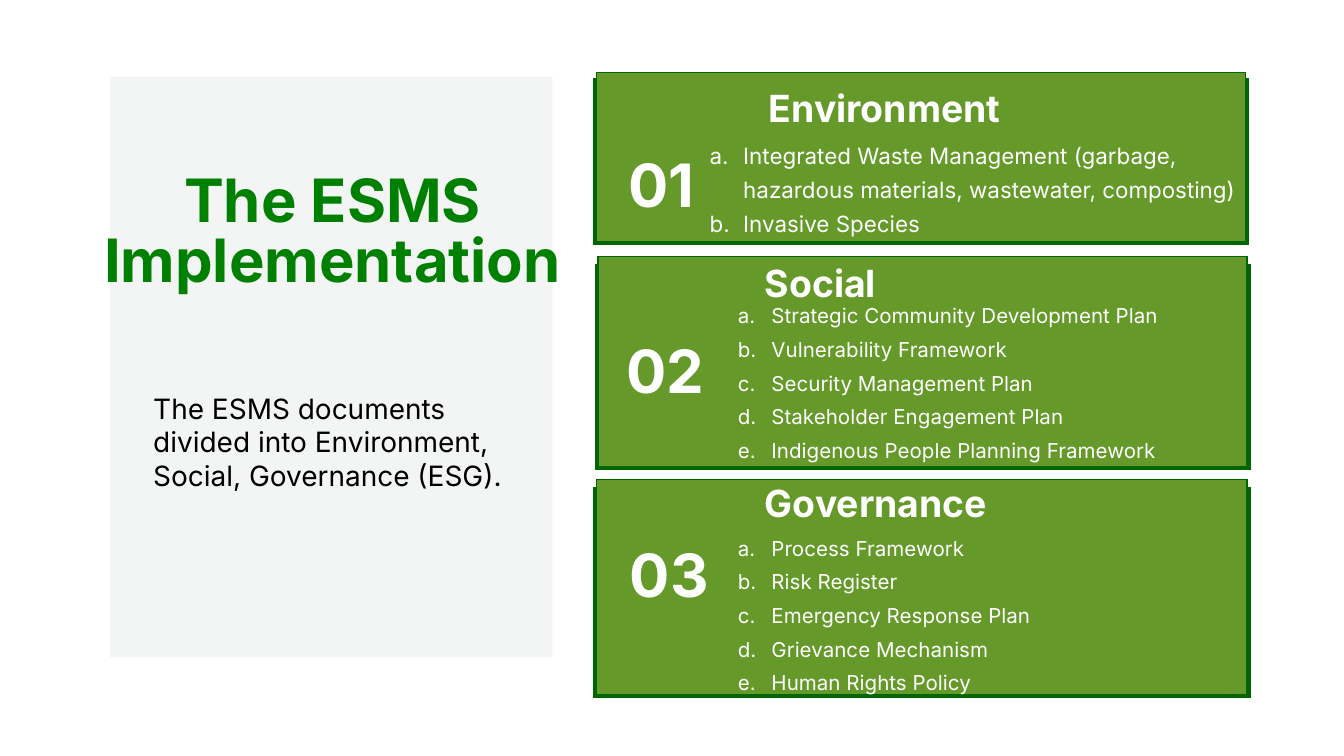
from lxml.etree import SubElement
from pptx import Presentation
from pptx.dml.color import RGBColor
from pptx.enum.shapes import MSO_SHAPE
from pptx.enum.text import PP_ALIGN
from pptx.oxml.ns import qn
from pptx.util import Inches, Pt

FONT = "Inter"
WHITE = RGBColor(0xFF, 0xFF, 0xFF)
BLACK = RGBColor(0x00, 0x00, 0x00)
PANEL_GRAY = RGBColor(0xF3, 0xF4, 0xF4)
TITLE_GREEN = RGBColor(0x00, 0x80, 0x00)
CARD_GREEN = RGBColor(0x65, 0x9A, 0x2A)
EDGE_GREEN = RGBColor(0x00, 0x66, 0x00)

# Box, strip at the top without thick edge, then number, heading and list
# positions relative to the box; list also has width and text size
CARDS = [
    dict(box=(4.44, 0.54, 4.83, 1.26), strip=0.07, number="01",
         number_at=(0.02, 0.65), heading="Environment", heading_at=(1.28, 0.15),
         list_at=(0.84, 0.47), list_width=3.99, size=12,
         items=["Integrated Waste Management (garbage, hazardous materials, "
                "wastewater, composting)", "Invasive Species"]),
    dict(box=(4.45, 1.91, 4.83, 1.56), strip=0.08, number="02",
         number_at=(0.04, 0.66), heading="Social", heading_at=(1.24, 0.08),
         list_at=(1.04, 0.28), list_width=3.77, size=11,
         items=["Strategic Community Development Plan", "Vulnerability Framework",
                "Security Management Plan", "Stakeholder Engagement Plan",
                "Indigenous People Planning Framework"]),
    dict(box=(4.44, 3.57, 4.84, 1.6), strip=0.08, number="03",
         number_at=(0.08, 0.52), heading="Governance", heading_at=(1.25, 0.06),
         list_at=(1.05, 0.35), list_width=3.22, size=11,
         items=["Process Framework", "Risk Register", "Emergency Response Plan",
                "Grievance Mechanism", "Human Rights Policy"]),
]


def add_rectangle(page, left, top, width, height, fill, edge_width=None):
    shape = page.shapes.add_shape(MSO_SHAPE.RECTANGLE, Inches(left), Inches(top),
                                  Inches(width), Inches(height))
    shape.shadow.inherit = False
    shape.fill.solid()
    shape.fill.fore_color.rgb = fill
    if edge_width is None:
        shape.line.fill.background()
    else:
        shape.line.color.rgb = EDGE_GREEN
        shape.line.width = Pt(edge_width)
        # Square corners
        outline = shape._element.spPr.find(qn("a:ln"))
        SubElement(outline, qn("a:miter"), lim="800000")


def add_text(page, lines, left, top, width, height, size, color=WHITE,
             bold=False, align=PP_ALIGN.LEFT, spacing=18, lettered=False):
    box = page.shapes.add_textbox(Inches(left), Inches(top),
                                  Inches(width), Inches(height))
    frame = box.text_frame
    frame.word_wrap = True
    frame.margin_left = frame.margin_top = 0
    frame.margin_right = frame.margin_bottom = 0
    for index, line in enumerate(lines):
        para = frame.add_paragraph() if index else frame.paragraphs[0]
        if lettered:
            properties = para._p.get_or_add_pPr()
            properties.set("marL", str(Inches(0.25)))
            properties.set("indent", str(-Inches(0.25)))
            SubElement(properties, qn("a:buAutoNum"), type="alphaLcPeriod")
        para.alignment = align
        para.line_spacing = Pt(spacing)
        span = para.add_run()
        span.text = line
        span.font.name = FONT
        span.font.size = Pt(size)
        span.font.bold = bold
        span.font.color.rgb = color


def add_intro_panel(page, left, top, width, height):
    add_rectangle(page, left, top, width, height, PANEL_GRAY)
    add_text(page, ["The ESMS Implementation"], left - 0.24, top + 0.73, 3.79, 0.9,
             size=32, color=TITLE_GREEN, bold=True, align=PP_ALIGN.CENTER, spacing=32)
    add_text(page, ["The ESMS documents divided into Environment, Social, "
                    "Governance (ESG)."],
             left + 0.32, top + 2.34, 2.91, 0.76, size=15, color=BLACK)


def add_card(page, box, strip, number, number_at, heading, heading_at,
             list_at, list_width, size, items):
    left, top, width, height = box
    # Thick-edged backing and the face on top of it
    add_rectangle(page, left, top + strip, width, height - strip, CARD_GREEN, 3.75)
    add_rectangle(page, left, top, width, height, CARD_GREEN, 0.75)
    # Number, heading and lettered list
    add_text(page, [number], left + number_at[0], top + number_at[1], 0.92, 0.45,
             size=32, bold=True, align=PP_ALIGN.CENTER, spacing=32)
    add_text(page, [heading], left + heading_at[0], top + heading_at[1], 2.32, 0.28,
             size=20, bold=True, spacing=20)
    add_text(page, items, left + list_at[0], top + list_at[1], list_width,
             height - list_at[1], size=size, lettered=True)


def main():
    deck = Presentation()
    # Widescreen, 16 to 9
    deck.slide_width = Inches(10)
    deck.slide_height = deck.slide_width * 9 // 16
    page = deck.slides.add_slide(deck.slide_layouts[6])
    add_intro_panel(page, 0.82, 0.57, 3.29, 4.32)
    for card in CARDS:
        add_card(page, **card)
    deck.save("out.pptx")


if __name__ == "__main__":
    main()
